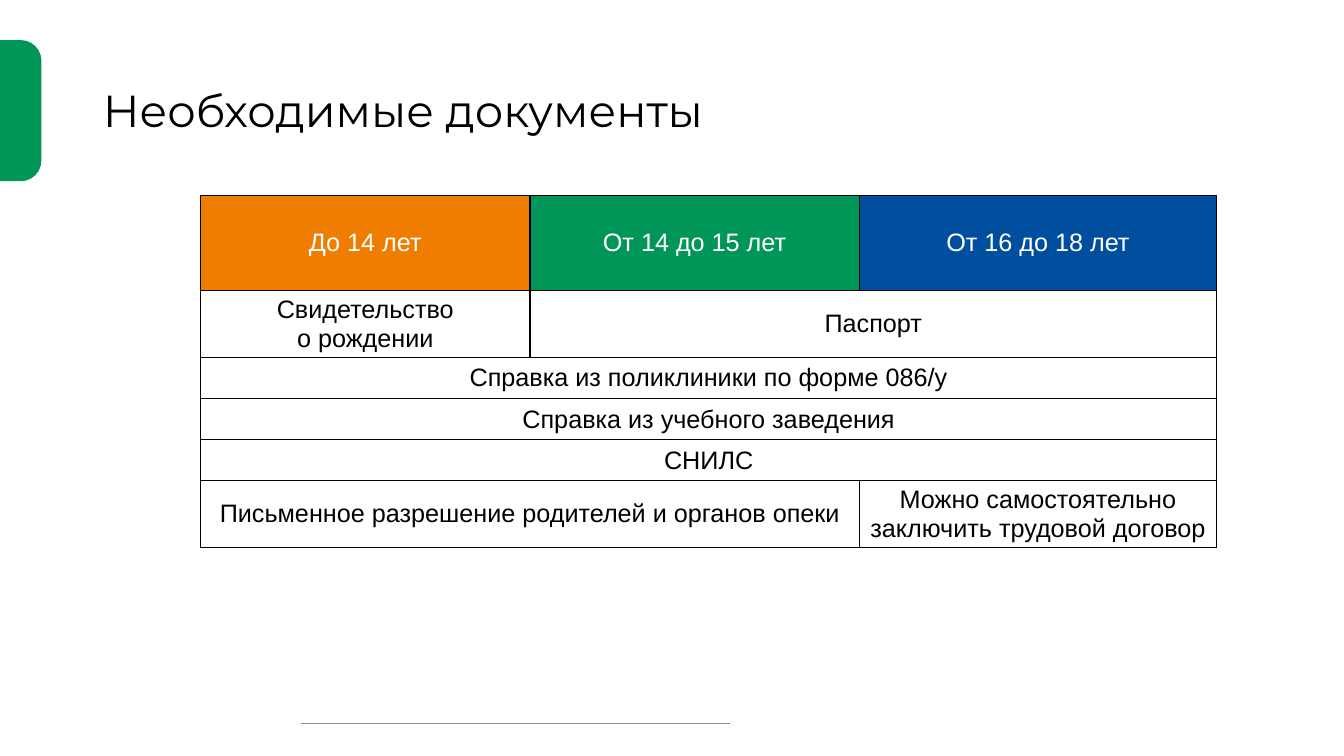
from dataclasses import dataclass

from lxml import etree
from pptx import Presentation, util as u
from pptx.dml.color import RGBColor
from pptx.enum import shapes, text
from pptx.oxml.ns import qn


@dataclass(frozen=True)
class Theme:
    orange: str = "EF7D00"
    green: str = "009657"
    blue: str = "004F9F"
    black: str = "000000"
    white: str = "FFFFFF"
    gray: str = "8C8C8C"
    title_font: str = "Montserrat"
    table_font: str = "Arial"
    title_size: int = 32
    table_size: int = 18
    thin_line: float = 0.75
    border: float = 1


THEME = Theme()
WIDTH, HEIGHT = u.Inches(13.33), u.Inches(7.5)

COLUMN_SHARES = [24.5, 24.5, 26.6]
ROW_SHARES = [12.6, 8.85, 5.43, 5.43, 5.43, 8.85]
HEADERS = [
    ("До 14 лет", THEME.orange),
    ("От 14 до 15 лет", THEME.green),
    ("От 16 до 18 лет", THEME.blue),
]
# Each row lists its cells as (text, columns spanned).
DOCUMENT_ROWS = [
    [("Свидетельство\nо рождении", 1), ("Паспорт", 2)],
    [("Справка из поликлиники по форме 086/у", 3)],
    [("Справка из учебного заведения", 3)],
    [("СНИЛС", 3)],
    [("Письменное разрешение родителей и органов опеки", 2),
     ("Можно самостоятельно заключить трудовой договор", 1)],
]


def across(percent):
    """Length as a percentage of the slide width."""
    return u.Emu(round(WIDTH * percent / 100))


def down(percent):
    """Length as a percentage of the slide height."""
    return u.Emu(round(HEIGHT * percent / 100))


def add_text(paragraph, content, font, size, color):
    """Add one run for each line, with line breaks between them."""
    for index, line in enumerate(content.split("\n")):
        if index:
            paragraph.add_line_break()
        run = paragraph.add_run()
        run.text = line
        run.font.name = font
        run.font.size = u.Pt(size)
        run.font.color.rgb = RGBColor.from_string(color)


def add_title(slide, content):
    title = slide.shapes.title
    title.left, title.top = across(6.9), down(5.33)
    title.width, title.height = across(86.25), down(19.33)
    frame = title.text_frame
    frame.word_wrap = True
    frame.auto_size = text.MSO_AUTO_SIZE.NONE
    frame.vertical_anchor = text.MSO_ANCHOR.MIDDLE
    paragraph = frame.paragraphs[0]
    paragraph.alignment = text.PP_ALIGN.LEFT
    paragraph.line_spacing = 0.9
    add_text(paragraph, content, THEME.title_font, THEME.title_size, THEME.black)


def add_side_tab(slide):
    """Green tab on the left edge, turned so that its round corners face right."""
    breadth, length = across(3.08), down(18.67)
    left = (breadth - length) // 2
    top = down(5.3) + (length - breadth) // 2
    tab = slide.shapes.add_shape(
        shapes.MSO_SHAPE.ROUND_2_SAME_RECTANGLE, left, top, length, breadth)
    tab.rotation = 90
    tab.adjustments[0], tab.adjustments[1] = 0.5, 0
    tab.shadow.inherit = False
    tab.fill.solid()
    tab.fill.fore_color.rgb = RGBColor.from_string(THEME.green)
    tab.line.fill.background()


def add_footer_line(slide):
    line = slide.shapes.add_connector(
        shapes.MSO_CONNECTOR.STRAIGHT,
        across(22.4), down(95.7), across(54.3), down(95.7))
    line.line.color.rgb = RGBColor.from_string(THEME.gray)
    line.line.width = u.Pt(THEME.thin_line)
    etree.SubElement(line._element.spPr, qn("a:effectLst"))


def set_borders(cell):
    properties = cell._tc.get_or_add_tcPr()
    for index, side in enumerate(("lnL", "lnR", "lnT", "lnB")):
        border = etree.Element(qn(f"a:{side}"), w=str(u.Pt(THEME.border)))
        fill = etree.SubElement(border, qn("a:solidFill"))
        etree.SubElement(fill, qn("a:srgbClr"), val=THEME.black)
        properties.insert(index, border)


def fill_cell(cell, content, color):
    cell.vertical_anchor = text.MSO_ANCHOR.MIDDLE
    paragraph = cell.text_frame.paragraphs[0]
    paragraph.alignment = text.PP_ALIGN.CENTER
    add_text(paragraph, content, THEME.table_font, THEME.table_size, color)


def add_documents_table(slide):
    table = slide.shapes.add_table(
        len(ROW_SHARES), len(COLUMN_SHARES), across(14.93), down(25.87),
        across(sum(COLUMN_SHARES)), down(sum(ROW_SHARES))).table
    table.horz_banding = False
    for column, share in zip(table.columns, COLUMN_SHARES):
        column.width = across(share)
    for row, share in zip(table.rows, ROW_SHARES):
        row.height = down(share)
    for cell in table.iter_cells():
        cell.fill.solid()
        cell.fill.fore_color.rgb = RGBColor.from_string(THEME.white)
        set_borders(cell)
    for column, (content, color) in enumerate(HEADERS):
        cell = table.cell(0, column)
        cell.fill.fore_color.rgb = RGBColor.from_string(color)
        fill_cell(cell, content, THEME.white)
    for row, documents in enumerate(DOCUMENT_ROWS, start=1):
        column = 0
        for content, span in documents:
            cell = table.cell(row, column)
            if span > 1:
                cell.merge(table.cell(row, column + span - 1))
            fill_cell(cell, content, THEME.black)
            column += span


def main():
    presentation = Presentation()
    presentation.slide_width, presentation.slide_height = WIDTH, HEIGHT
    title_only = presentation.slide_layouts[5]
    slide = presentation.slides.add_slide(title_only)
    add_footer_line(slide)
    add_side_tab(slide)
    add_title(slide, "Необходимые документы")
    add_documents_table(slide)
    presentation.save("out.pptx")


if __name__ == "__main__":
    main()
